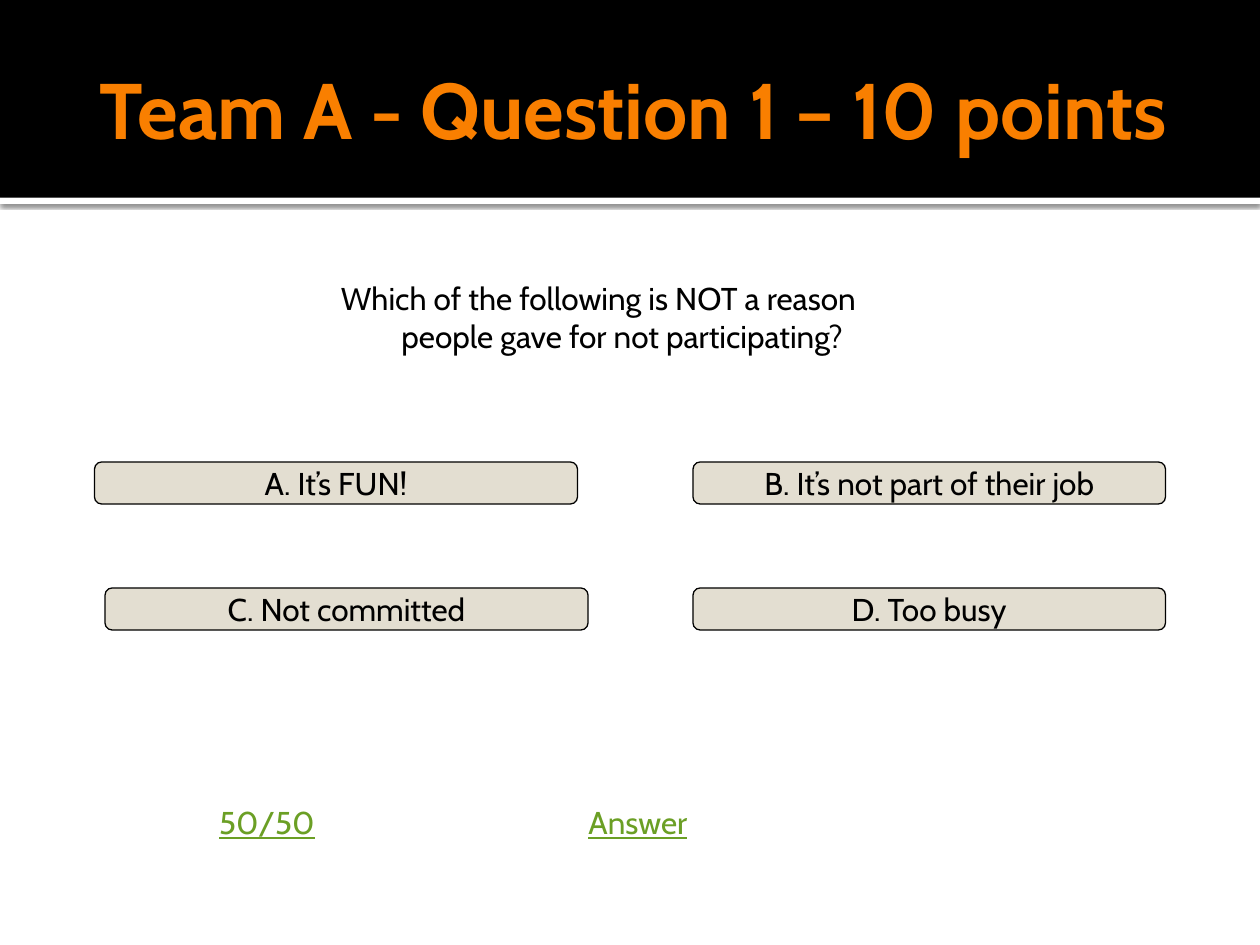
from lxml import etree
from pptx import Presentation
from pptx.dml.color import RGBColor
from pptx.enum.shapes import MSO_SHAPE as Shape
from pptx.enum.text import MSO_ANCHOR as Anchor, PP_ALIGN as Align
from pptx.oxml import parse_xml
from pptx.oxml.ns import nsdecls, qn
from pptx.util import Pt

COLORS = {
    "band": "000000",
    "stripe": "FFFFFF",
    "title": "F97F00",
    "text": "000000",
    "option": "E3DED1",
    "link": "6B9F25",
}


def add_block(page, preset, left, top, width, height, color):
    block = page.shapes.add_shape(preset, Pt(left), Pt(top), Pt(width), Pt(height))
    block.shadow.inherit = False
    block.fill.solid()
    block.fill.fore_color.rgb = RGBColor.from_string(COLORS[color])
    block.line.fill.background()
    return block


def write(frame, text, size=18, color="text", bold=False, underline=False):
    para = frame.paragraphs[0]
    para.alignment = Align.CENTER
    span = para.add_run()
    span.text = text
    span.font.name = "Cabin"
    span.font.size = Pt(size)
    span.font.bold = bold
    span.font.underline = underline
    span.font.color.rgb = RGBColor.from_string(COLORS[color])
    return para


deck = Presentation()
deck.slide_width, deck.slide_height = Pt(720), Pt(540)
page = deck.slides.add_slide(deck.slide_layouts[6])

stripe = add_block(page, Shape.RECTANGLE, 0, 113, 720, 3.6, "stripe")
effects = stripe._element.spPr.find(qn("a:effectLst"))
effects.append(parse_xml(
    f'<a:outerShdw {nsdecls("a")} blurRad="{Pt(2.5)}" dist="{Pt(0.8)}" dir="5400000">'
    '<a:srgbClr val="000000"><a:alpha val="60000"/></a:srgbClr></a:outerShdw>'
))
add_block(page, Shape.RECTANGLE, 0, 0, 720, 113, "band")

title = page.shapes.add_textbox(Pt(36), Pt(12.24), Pt(648), Pt(98.64)).text_frame
title.word_wrap = True
title.vertical_anchor = Anchor.MIDDLE
title.margin_right = Pt(3.6)
write(title, "Team A - Question 1 – 10 points", 45, "title", bold=True)

question = page.shapes.add_textbox(Pt(162), Pt(156), Pt(360), Pt(50.4)).text_frame
question.word_wrap = True
para = write(question, "Which of the following is NOT a reason people gave for not participating?")
indent = para._p.get_or_add_pPr()
indent.set("marL", str(Pt(27)))
indent.set("indent", str(-Pt(27)))

options = [
    ("A. It’s FUN!", 54, 264, 276),
    ("B. It’s not part of their job", 396, 264, 270),
    ("C. Not committed", 60, 336, 276),
    ("D. Too busy", 396, 336, 270),
]
for text, left, top, width in options:
    option = add_block(page, Shape.ROUNDED_RECTANGLE, left, top, width, 24, "option")
    option.adjustments[0] = 0.17
    option.line.color.rgb = RGBColor.from_string(COLORS["text"])
    option.line.width = Pt(0.75)
    option.text_frame.word_wrap = False
    option.text_frame.vertical_anchor = Anchor.MIDDLE
    write(option.text_frame, text)

choices = page.shapes.add_table(1, 3, Pt(42), Pt(456), Pt(636), Pt(42)).table
choices.first_row = False
choices.horz_banding = False
for cell, text in zip(choices.rows[0].cells, ["50/50", "Answer", ""]):
    cell.fill.background()
    if text:
        para = write(cell.text_frame, text, color="link", underline=True)
        para._p.get_or_add_pPr().set("marL", str(Pt(9)))

deck.save("out.pptx")
